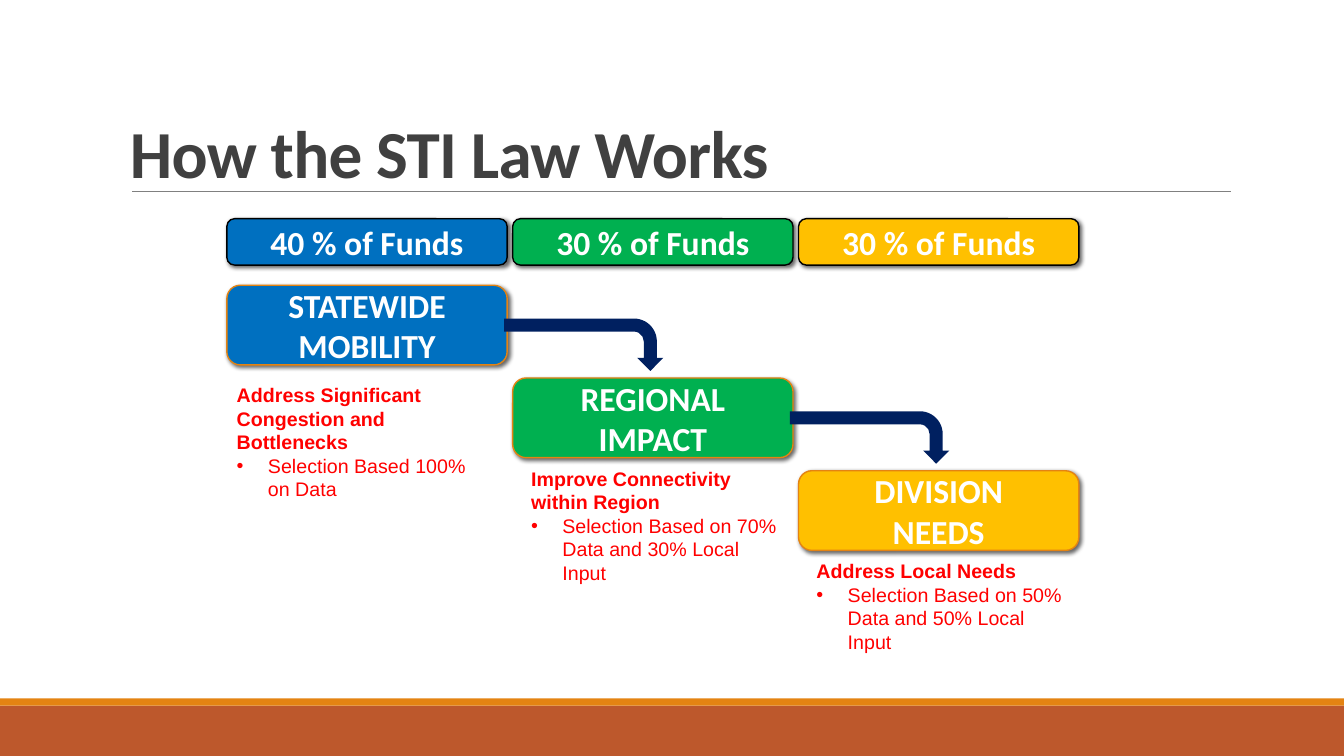
from dataclasses import dataclass

from lxml.etree import SubElement
from pptx import Presentation
from pptx.dml.color import RGBColor
from pptx.enum.shapes import MSO_CONNECTOR, MSO_SHAPE
from pptx.enum.text import MSO_ANCHOR, PP_ALIGN
from pptx.oxml.ns import qn
from pptx.util import Inches, Pt

COLORS = {
    "blue": "0070C0", "green": "00B050", "gold": "FFC000", "navy": "002060",
    "orange": "E48312", "rust": "BD582C", "black": "000000", "white": "FFFFFF",
    "gray": "808080", "title": "404040", "red": "FF0000",
}
TITLE_FONT = {"name": "Calibri", "size": Pt(48), "bold": True}
LABEL_FONT = {"name": "Calibri", "size": Pt(24), "bold": True}
HEADING_FONT = {"name": "Arial", "size": Pt(14), "bold": True}
DETAIL_FONT = {"name": "Arial", "size": Pt(14), "bold": False}

TIER_LEFT, TIER_PITCH, TIER_WIDTH = 2.25, 2.835, 2.78
TIER_TOP, TIER_DROP, TIER_HEIGHT = 2.83, 0.92, 0.79
FUND_TOP, FUND_HEIGHT = 2.17, 0.46


@dataclass
class Tier:
    share: str
    name: list[str]
    color: str
    heading: str
    detail: str
    caption_at: tuple[float, float, float, float]


TIERS = [
    Tier("40 % of Funds", ["STATEWIDE", "MOBILITY"], "blue",
         "Address Significant Congestion and Bottlenecks",
         "Selection Based 100% on Data", (2.25, 3.75, 2.67, 1.51)),
    Tier("30 % of Funds", ["REGIONAL", "IMPACT"], "green",
         "Improve Connectivity within Region",
         "Selection Based on 70% Data and 30% Local Input", (5.17, 4.58, 2.67, 1.28)),
    Tier("30 % of Funds", ["DIVISION", "NEEDS"], "gold",
         "Address Local Needs",
         "Selection Based on 50% Data and 50% Local Input", (8, 5.5, 2.67, 1.04)),
]


def rgb(color: str) -> RGBColor:
    return RGBColor.from_string(COLORS[color])


def set_font(font, values: dict, color: str) -> None:
    for name, value in values.items():
        setattr(font, name, value)
    font.color.rgb = rgb(color)


def add_block(page, kind, at: tuple, fill: str, line: str | None = None):
    block = page.shapes.add_shape(kind, *map(Inches, at))
    block.shadow.inherit = False
    block.fill.solid()
    block.fill.fore_color.rgb = rgb(fill)
    if line:
        block.line.color.rgb = rgb(line)
        block.line.width = Pt(1)
    else:
        block.line.fill.background()
    return block


def add_shadow(shape) -> None:
    effects = shape._element.spPr.find(qn("a:effectLst"))
    shadow = SubElement(effects, qn("a:outerShdw"), blurRad=str(Pt(3)),
                        dist=str(Pt(2)), dir="2700000", rotWithShape="0")
    color = SubElement(shadow, qn("a:srgbClr"), val=COLORS["black"])
    SubElement(color, qn("a:alpha"), val="60000")


def add_label(page, at: tuple, lines: list[str], fill: str, line: str) -> None:
    box = add_block(page, MSO_SHAPE.ROUNDED_RECTANGLE, at, fill, line)
    add_shadow(box)
    frame = box.text_frame
    frame.vertical_anchor = MSO_ANCHOR.MIDDLE
    frame.text = "\n".join(lines)
    for para in frame.paragraphs:
        para.alignment = PP_ALIGN.CENTER
        set_font(para.font, LABEL_FONT, "white")


def add_text_box(page, at: tuple):
    frame = page.shapes.add_textbox(*map(Inches, at)).text_frame
    frame.word_wrap = True
    return frame


def add_caption(page, tier: Tier) -> None:
    frame = add_text_box(page, tier.caption_at)
    heading = frame.paragraphs[0]
    heading.text = tier.heading
    set_font(heading.font, HEADING_FONT, "red")
    detail = frame.add_paragraph()
    detail.text = tier.detail
    properties = detail._p.get_or_add_pPr()
    properties.set("marL", str(Inches(0.31)))
    properties.set("indent", str(Inches(-0.31)))
    SubElement(properties, qn("a:buFont"), typeface="Arial")
    SubElement(properties, qn("a:buChar"), char="•")
    set_font(detail.font, DETAIL_FONT, "red")


def add_title(page, text: str) -> None:
    frame = add_text_box(page, (1.19, 0.04, 10.96, 1.92))
    frame.vertical_anchor = MSO_ANCHOR.BOTTOM
    para = frame.paragraphs[0]
    para.line_spacing = 0.85
    span = para.add_run()
    span.text = text
    set_font(span.font, TITLE_FONT, "title")
    span._r.get_or_add_rPr().set("spc", "-50")


def add_rule(page) -> None:
    rule = page.shapes.add_connector(
        MSO_CONNECTOR.STRAIGHT, *map(Inches, (1.31, 1.9, 12.21, 1.9)))
    rule.line.color.rgb = rgb("gray")
    rule.line.width = Pt(0.5)
    SubElement(rule._element.spPr, qn("a:effectLst"))


def main() -> None:
    deck = Presentation()
    deck.slide_width, deck.slide_height = Inches(13.33), Inches(7.5)
    page = deck.slides.add_slide(deck.slide_layouts[6])

    # Footer bands, title and rule
    add_block(page, MSO_SHAPE.RECTANGLE, (0, 7, 13.33, 0.5), "rust")
    add_block(page, MSO_SHAPE.RECTANGLE, (0, 6.93, 13.33, 0.07), "orange")
    add_rule(page)
    add_title(page, "How the STI Law Works")

    # Funding shares
    for index, tier in enumerate(TIERS):
        left = TIER_LEFT + index * TIER_PITCH
        add_label(page, (left, FUND_TOP, TIER_WIDTH, FUND_HEIGHT),
                  [tier.share], tier.color, "black")

    # Descending tiers, each with an arrow to the next
    for index, tier in enumerate(TIERS):
        left = TIER_LEFT + index * TIER_PITCH
        top = TIER_TOP + index * TIER_DROP
        add_label(page, (left, top, TIER_WIDTH, TIER_HEIGHT),
                  tier.name, tier.color, "orange")
        if index < len(TIERS) - 1:
            arrow = add_block(page, MSO_SHAPE.BENT_ARROW,
                              (left + 3.28, top - 0.2, 0.52, 1.58), "navy")
            arrow.rotation = 90

    # Captions
    for tier in TIERS:
        add_caption(page, tier)

    deck.save("out.pptx")


if __name__ == "__main__":
    main()
